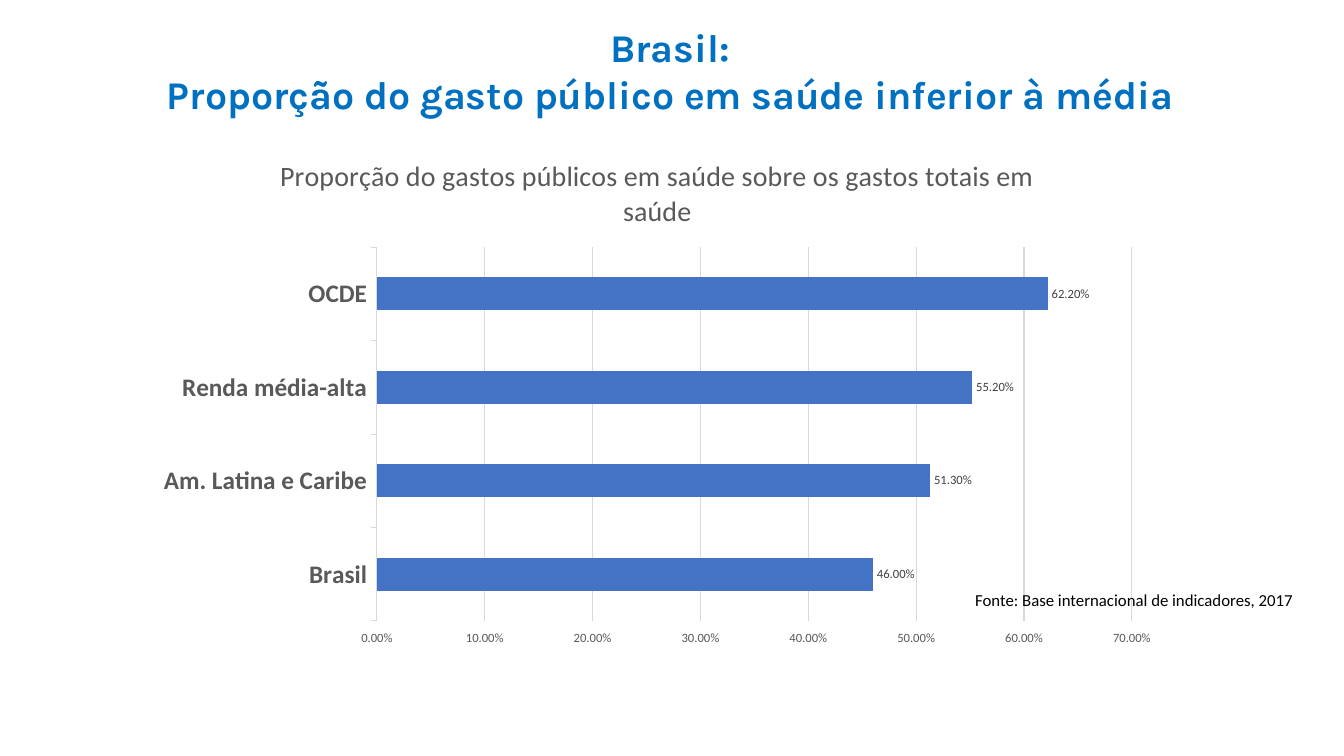
from dataclasses import dataclass

from pptx import Presentation
from pptx.chart.data import CategoryChartData
from pptx.dml.color import RGBColor
from pptx.enum.chart import XL_CHART_TYPE as ChartType
from pptx.enum.chart import XL_LABEL_POSITION as LabelPosition
from pptx.enum.chart import XL_TICK_MARK as TickMark
from pptx.enum.text import MSO_ANCHOR as Anchor
from pptx.enum.text import MSO_AUTO_SIZE as AutoSize
from pptx.enum.text import PP_ALIGN as Align
from pptx.util import Cm, Pt


@dataclass(frozen=True)
class Theme:
    heading_font: str = "Karla"
    body_font: str = "Calibri"
    heading: str = "0070C0"
    bar: str = "4472C4"
    axis_text: str = "595959"
    label_text: str = "404040"
    grid: str = "D9D9D9"
    source_text: str = "000000"
    heading_size: int = 28
    chart_title_size: int = 20
    category_size: int = 18
    source_size: int = 12
    small_size: int = 9
    line_width: float = 0.75


@dataclass(frozen=True)
class Box:
    left: float
    top: float
    width: float
    height: float

    def lengths(self):
        return Cm(self.left), Cm(self.top), Cm(self.width), Cm(self.height)


THEME = Theme()
PERCENT = "0.00%"
HEADING = "Brasil: \nProporção do gasto público em saúde inferior à média "
CHART_TITLE = "Proporção do gastos públicos em saúde sobre os gastos totais em saúde"
SOURCE = "Fonte: Base internacional de indicadores, 2017"
SHARES = {
    "Brasil": 0.46,
    "Am. Latina e Caribe": 0.513,
    "Renda média-alta": 0.552,
    "OCDE": 0.622,
}


def style_font(font, size, color, bold=False, name=THEME.body_font):
    font.name = name
    font.size = Pt(size)
    font.bold = bold
    font.color.rgb = RGBColor.from_string(color)


def style_line(line):
    line.color.rgb = RGBColor.from_string(THEME.grid)
    line.width = Pt(THEME.line_width)


def style_paragraphs(frame, align, *font_style, **font_options):
    for paragraph in frame.paragraphs:
        paragraph.alignment = align
        for run in paragraph.runs:
            style_font(run.font, *font_style, **font_options)


def place_heading(slide, box):
    heading = slide.shapes.title
    heading.left, heading.top, heading.width, heading.height = box.lengths()
    frame = heading.text_frame
    frame.text = HEADING
    frame.word_wrap = True
    frame.auto_size = AutoSize.NONE
    frame.vertical_anchor = Anchor.TOP
    style_paragraphs(frame, Align.CENTER, THEME.heading_size, THEME.heading,
                     bold=True, name=THEME.heading_font)


def style_axes(chart):
    regions = chart.category_axis
    regions.major_tick_mark = TickMark.OUTSIDE
    regions.has_major_gridlines = False
    style_font(regions.tick_labels.font, THEME.category_size, THEME.axis_text, bold=True)
    style_line(regions.format.line)

    share = chart.value_axis
    share.minimum_scale, share.maximum_scale, share.major_unit = 0, 0.7, 0.1
    share.major_tick_mark = TickMark.OUTSIDE
    share.tick_labels.number_format = PERCENT
    share.tick_labels.number_format_is_linked = False
    style_font(share.tick_labels.font, THEME.small_size, THEME.axis_text)
    share.format.line.fill.background()
    share.has_major_gridlines = True
    style_line(share.major_gridlines.format.line)


def style_bars(plot):
    plot.gap_width = 182
    plot.vary_by_categories = False
    spending = plot.series[0]
    spending.format.fill.solid()
    spending.format.fill.fore_color.rgb = RGBColor.from_string(THEME.bar)
    labels = spending.data_labels
    labels.show_value = True
    labels.position = LabelPosition.OUTSIDE_END
    labels.number_format = PERCENT
    labels.number_format_is_linked = False
    style_font(labels.font, THEME.small_size, THEME.label_text)


def place_spending_chart(slide, box):
    spending = CategoryChartData(number_format=PERCENT)
    spending.categories = list(SHARES)
    spending.add_series("Series 1", list(SHARES.values()))
    chart = slide.shapes.add_chart(
        ChartType.BAR_CLUSTERED, *box.lengths(), spending).chart
    chart.has_legend = False
    chart.font.name = THEME.body_font
    chart.has_title = True
    chart_title = chart.chart_title
    chart_title.include_in_layout = False
    chart_title.text_frame.text = CHART_TITLE
    style_paragraphs(chart_title.text_frame, Align.CENTER,
                     THEME.chart_title_size, THEME.axis_text)
    style_axes(chart)
    style_bars(chart.plots[0])


def place_source(slide, box):
    frame = slide.shapes.add_textbox(*box.lengths()).text_frame
    frame.text = SOURCE
    frame.word_wrap = True
    frame.auto_size = AutoSize.SHAPE_TO_FIT_TEXT
    style_paragraphs(frame, Align.RIGHT, THEME.source_size, THEME.source_text)


def main():
    deck = Presentation()
    deck.slide_width, deck.slide_height = Cm(33.87), Cm(19.05)
    slide = deck.slides.add_slide(deck.slide_layouts.get_by_name("Title Only"))
    place_heading(slide, Box(2.34, 0.46, 29.34, 3.68))
    place_spending_chart(slide, Box(3.61, 3.4, 25.91, 13.13))
    place_source(slide, Box(15.72, 14.73, 17.12, 0.76))
    deck.save("out.pptx")


if __name__ == "__main__":
    main()
